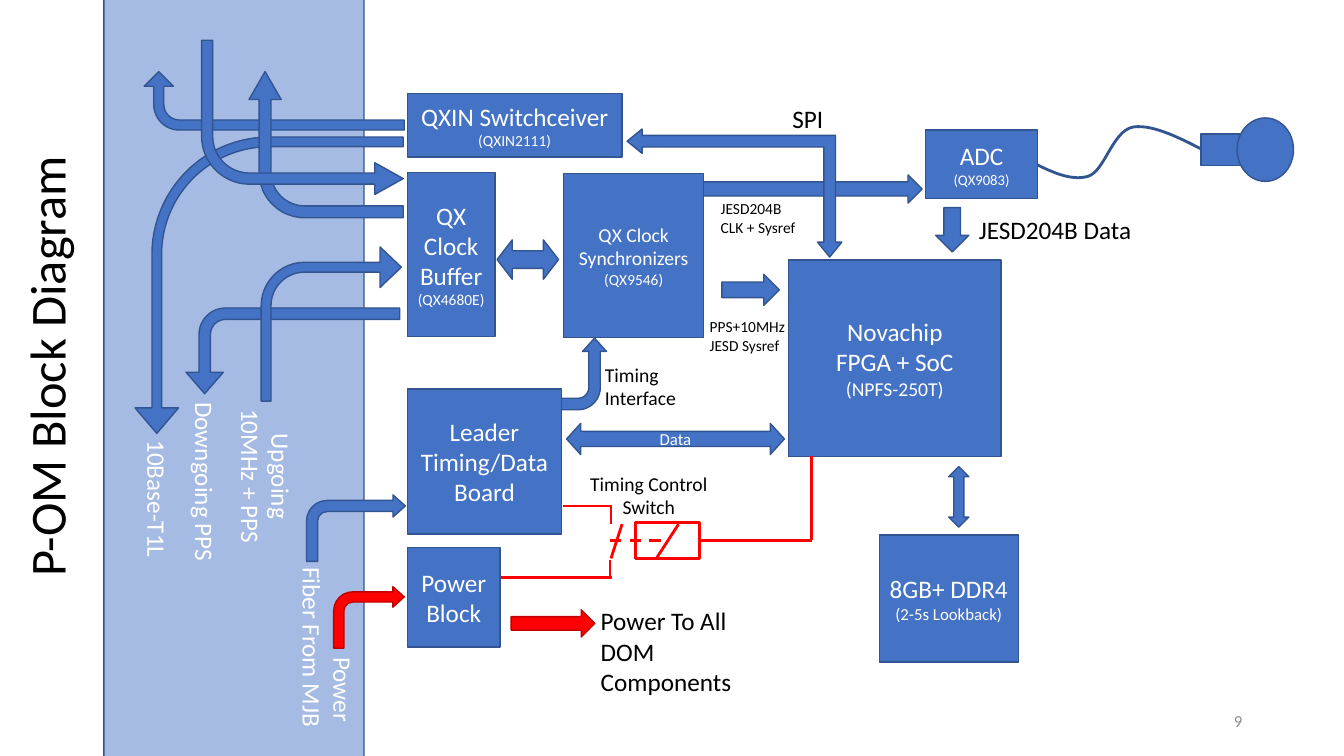
from lxml.etree import SubElement
from pptx import Presentation
from pptx.dml.color import RGBColor
from pptx.enum.dml import MSO_LINE
from pptx.enum.shapes import MSO_CONNECTOR, MSO_SHAPE
from pptx.enum.text import MSO_ANCHOR, MSO_AUTO_SIZE, PP_ALIGN
from pptx.oxml.ns import qn
from pptx.util import Cm, Pt

BLUE = RGBColor(0x44, 0x72, 0xC4)
NAVY = RGBColor(0x32, 0x54, 0x91)
SKY = RGBColor(0x8F, 0xAA, 0xDC)
RED = RGBColor(0xFF, 0x00, 0x00)
DARK_RED = RGBColor(0xC0, 0x00, 0x00)
WHITE = RGBColor(0xFF, 0xFF, 0xFF)
BLACK = RGBColor(0x00, 0x00, 0x00)
GREY = RGBColor(0x8C, 0x8C, 0x8C)
FONT = "Calibri"
UNIT = 2.54  # centimetres per layout unit
LEFT, CENTER, RIGHT = PP_ALIGN.LEFT, PP_ALIGN.CENTER, PP_ALIGN.RIGHT
BENT = MSO_SHAPE.BENT_ARROW

# Content: frames are (left, top, width, height) in layout units
TITLE = "P-OM Block Diagram"
TITLE_FRAME = (-1.75, 3.26, 4.41, 0.71)
BAND_FRAME = (1.03, -0.97, 2.58, 9.01)

# Blocks: frame, lines of (text, size)
BLOCKS = [
    ((4.04, 3.86, 1.53, 1.44), [("Leader Timing/Data Board", 18)]),
    ((4.04, 5.43, 0.92, 0.99), [("Power Block", 18)]),
    ((4.04, 0.93, 2.13, 0.63), [("QXIN Switchceiver", 18), ("(QXIN2111)", 11)]),
    ((4.04, 1.71, 0.87, 1.63), [("QX Clock Buffer", 18), ("(QX4680E)", 11)]),
    ((9.18, 1.29, 1.11, 0.68), [("ADC", 18), ("(QX9083)", 10.5)]),
    ((8.72, 5.31, 1.38, 1.26), [("8GB+ DDR4", 18), ("(2-5s Lookback)", 12)]),
    ((5.59, 1.72, 1.39, 1.63), [("QX Clock Synchronizers", 14), ("(QX9546)", 11)]),
    ((7.82, 2.58, 2.11, 1.95),
     [("Novachip", 18), ("FPGA + SoC", 18), ("(NPFS-250T)", 14)]),
]

# Arrows: preset, frame, rotation, vertical flip, adjustments
ARROWS_BEHIND = [
    (MSO_SHAPE.UP_DOWN_ARROW, (7.76, 0.63, 0.28, 2.49), 90, False, ()),
    (BENT, (5.14, 3.19, 0.71, 1.04), 270, True, (0.16, 0.167, 0.185, 0.31)),
]
ARROWS = [
    (BENT, (2.43, -0.29, 0.58, 2.58), 270, False, (0.172, 0.25, 0.25, 0.438)),
    (BENT, (1.2, 1.5, 2.94, 2.66), 90, True, (0.036, 0.081, 0.095, 0.438)),
    (BENT, (2.51, 0.67, 1.45, 1.53), 270, False, (0.081, 0.11, 0.191, 0.31)),
    (BENT, (2.48, 2.42, 0.85, 2.12), 90, True, (0.133, 0.218, 0.25, 0.31)),
    (BENT, (2.59, 2.45, 1.39, 1.53), 0, False, (0.07, 0.145, 0.152, 0.31)),
    (BENT, (2, 0.4, 2, 1.53), 0, True, (0.072, 0.103, 0.185, 0.31)),
    (BENT, (3.04, 4.91, 0.98, 0.66), 0, False, (0.166, 0.167, 0.185, 0.31)),
    (MSO_SHAPE.LEFT_UP_ARROW, (6.65, 0.85, 1.27, 2.13), 270, False,
     (0.091, 0.095, 0.117)),
    (MSO_SHAPE.DOWN_ARROW, (9.28, 2.06, 0.33, 0.44), 0, False, ()),
    (MSO_SHAPE.LEFT_RIGHT_ARROW, (4.93, 2.38, 0.61, 0.39), 0, False, (0.448, 0.386)),
    (MSO_SHAPE.UP_DOWN_ARROW, (9.41, 4.63, 0.2, 0.6), 0, False, ()),
    (MSO_SHAPE.DOWN_ARROW, (7.29, 2.59, 0.31, 0.57), 270, False, ()),
]
POWER_ARROWS = [
    (BENT, (3.31, 5.82, 0.7, 0.61), 0, False, (0.166, 0.167, 0.185, 0.31)),
    (MSO_SHAPE.RIGHT_ARROW, (5.07, 6.05, 0.83, 0.27), 0, False, ()),
]
DATA_ARROW = (MSO_SHAPE.LEFT_RIGHT_ARROW, (5.62, 4.2, 2.16, 0.31), 0, False,
              (0.484, 0.453))

# Timing control switch: wires as (x1, y1, x2, y2) and relay coil
WIRES = [
    (4.97, 5.73, 6.07, 5.73), (6.07, 5.02, 5.58, 5.02), (6.05, 5.56, 6.05, 5.73),
    (6.17, 5.2, 6.06, 5.54), (6.06, 5.02, 6.06, 5.2), (6.73, 5.2, 6.51, 5.54),
    (6.94, 5.36, 8.05, 5.36), (8.05, 5.36, 8.05, 4.52),
]
COIL_LINK = (6.05, 5.36, 6.62, 5.36)
COIL_FRAME = (6.3, 5.18, 0.64, 0.36)

# Sensor and its cable, the cable as cubic curves
SENSOR = [(MSO_SHAPE.RECTANGLE, (11.91, 1.33, 0.72, 0.31)),
          (MSO_SHAPE.OVAL, (12.27, 1.17, 0.56, 0.63))]
CABLE_START = (12.03, 1.54)
CABLE = [((11.73, 1.38), (11.44, 1.23), (11.24, 1.26)),
         ((11.03, 1.3), (10.96, 1.7), (10.79, 1.75)),
         ((10.62, 1.8), (10.41, 1.7), (10.2, 1.59))]
CURVE_STEPS = 16

# Labels: lines, frame, size, alignment, wrap
LABELS = [
    (["Timing Interface"], (5.9, 3.55, 1.19, 0.57), 14, LEFT, True),
    (["Timing Control Switch"], (5.73, 4.63, 1.41, 0.57), 14, CENTER, True),
    (["Power To All DOM Components"], (5.86, 5.96, 1.79, 1.01), 18, LEFT, True),
    (["SPI"], (7.76, 0.98, 0.51, 0.4), 18, LEFT, False),
    (["JESD204B Data"], (9.61, 2.08, 1.73, 0.4), 18, LEFT, False),
    (["JESD204B CLK + Sysref"], (7.05, 1.93, 1.04, 0.47), 11, LEFT, True),
    (["PPS+10MHz", "JESD Sysref"], (6.94, 3.1, 0.95, 0.47), 11, LEFT, False),
]
# Cable names, turned to read downwards: text, frame, alignment
BAND_LABELS = [
    ("Upgoing 10MHz + PPS", (1.79, 4.37, 1.69, 0.71), CENTER),
    ("Downgoing PPS", (0.9, 4.58, 2.27, 0.4), CENTER),
    ("10Base-T1L", (0.8, 4.83, 1.52, 0.4), LEFT),
    ("Fiber From MJB", (2.14, 6.22, 1.92, 0.4), CENTER),
    ("Power", (2.9, 6.64, 1.01, 0.4), CENTER),
]
PAGE_NUMBER = ("9", (9.42, 6.95, 3, 0.4))


def lengths(values):
    return [Cm(value * UNIT) for value in values]


def write(frame, lines, color, align):
    frame.word_wrap = True
    for i, (text, size) in enumerate(lines):
        paragraph = frame.paragraphs[0] if i == 0 else frame.add_paragraph()
        paragraph.text = text
        paragraph.alignment = align
        paragraph.font.size = Pt(size)
        paragraph.font.name = FONT
        paragraph.font.color.rgb = color


def add_part(shapes, preset, frame, fill=BLUE, line=NAVY, width=1):
    part = shapes.add_shape(preset, *lengths(frame))
    part.shadow.inherit = False
    if fill is None:
        part.fill.background()
    else:
        part.fill.solid()
        part.fill.fore_color.rgb = fill
    part.line.color.rgb = line
    part.line.width = Pt(width)
    return part


def add_arrow(shapes, arrow, fill=BLUE, line=NAVY):
    preset, frame, rotation, flipped, adjustments = arrow
    part = add_part(shapes, preset, frame, fill, line)
    part.rotation = rotation
    if flipped:
        part.element.spPr.xfrm.set("flipV", "1")
    for i, value in enumerate(adjustments):
        part.adjustments[i] = value
    return part


def add_label(shapes, lines, frame, size, align, color=BLACK, wrap=True, rotation=0):
    label = shapes.add_textbox(*lengths(frame))
    write(label.text_frame, [(text, size) for text in lines], color, align)
    label.text_frame.word_wrap = wrap
    label.text_frame.auto_size = MSO_AUTO_SIZE.SHAPE_TO_FIT_TEXT
    label.rotation = rotation
    return label


def add_wire(shapes, ends):
    wire = shapes.add_connector(MSO_CONNECTOR.STRAIGHT, *lengths(ends))
    wire.line.color.rgb = RED
    wire.line.width = Pt(2)
    SubElement(wire.element.spPr, qn("a:effectLst"))
    return wire


def add_cable(shapes):
    start, points = CABLE_START, []
    for c1, c2, end in CABLE:
        for step in range(1, CURVE_STEPS + 1):
            t = step / CURVE_STEPS
            u = 1 - t
            points.append(lengths(
                u**3 * a + 3 * u * u * t * b + 3 * u * t * t * c + t**3 * d
                for a, b, c, d in zip(start, c1, c2, end)))
        start = end
    builder = shapes.build_freeform(*lengths(CABLE_START))
    builder.add_line_segments(points, close=False)
    cable = builder.convert_to_shape()
    cable.shadow.inherit = False
    cable.fill.background()
    cable.line.color.rgb = NAVY
    cable.line.width = Pt(2)


def main():
    prs = Presentation()
    prs.slide_width, prs.slide_height = lengths((13.33, 7.5))
    slide = prs.slides.add_slide(prs.slide_layouts[5])
    shapes = slide.shapes

    # Title along the left edge
    title = shapes.title
    title.left, title.top, title.width, title.height = lengths(TITLE_FRAME)
    title.rotation = 270
    write(title.text_frame, [(TITLE, 36)], BLACK, LEFT)
    title.text_frame.word_wrap = False
    title.text_frame.auto_size = MSO_AUTO_SIZE.NONE
    title.text_frame.vertical_anchor = MSO_ANCHOR.TOP

    # Cable, rear arrows and translucent band
    add_cable(shapes)
    for arrow in ARROWS_BEHIND:
        add_arrow(shapes, arrow)
    band = add_part(shapes, MSO_SHAPE.CAN, BAND_FRAME, SKY)
    tint = band.element.spPr.find(qn("a:solidFill"))[0]
    SubElement(tint, qn("a:alpha")).set("val", "80000")

    # Blocks and arrows
    for frame, lines in BLOCKS:
        block = add_part(shapes, MSO_SHAPE.RECTANGLE, frame)
        write(block.text_frame, lines, WHITE, CENTER)
        block.text_frame.vertical_anchor = MSO_ANCHOR.MIDDLE
    for arrow in ARROWS:
        add_arrow(shapes, arrow)
    for arrow in POWER_ARROWS:
        add_arrow(shapes, arrow, RED, DARK_RED)
    data = add_arrow(shapes, DATA_ARROW)
    write(data.text_frame, [("Data", 12)], WHITE, CENTER)
    data.text_frame.vertical_anchor = MSO_ANCHOR.MIDDLE

    # Switch circuit and sensor
    for ends in WIRES:
        add_wire(shapes, ends)
    add_wire(shapes, COIL_LINK).line.dash_style = MSO_LINE.DASH
    add_part(shapes, MSO_SHAPE.RECTANGLE, COIL_FRAME, None, RED, 2)
    sensor = shapes.add_group_shape()
    for preset, frame in SENSOR:
        add_part(sensor.shapes, preset, frame)

    # Labels and page number
    for lines, frame, size, align, wrap in LABELS:
        add_label(shapes, lines, frame, size, align, wrap=wrap)
    for text, frame, align in BAND_LABELS:
        add_label(shapes, [text], frame, 18, align, WHITE, rotation=90)
    number, frame = PAGE_NUMBER
    page = add_label(shapes, [number], frame, 12, RIGHT, GREY)
    page.text_frame.auto_size = MSO_AUTO_SIZE.NONE
    page.text_frame.vertical_anchor = MSO_ANCHOR.MIDDLE

    prs.save("out.pptx")


if __name__ == "__main__":
    main()
